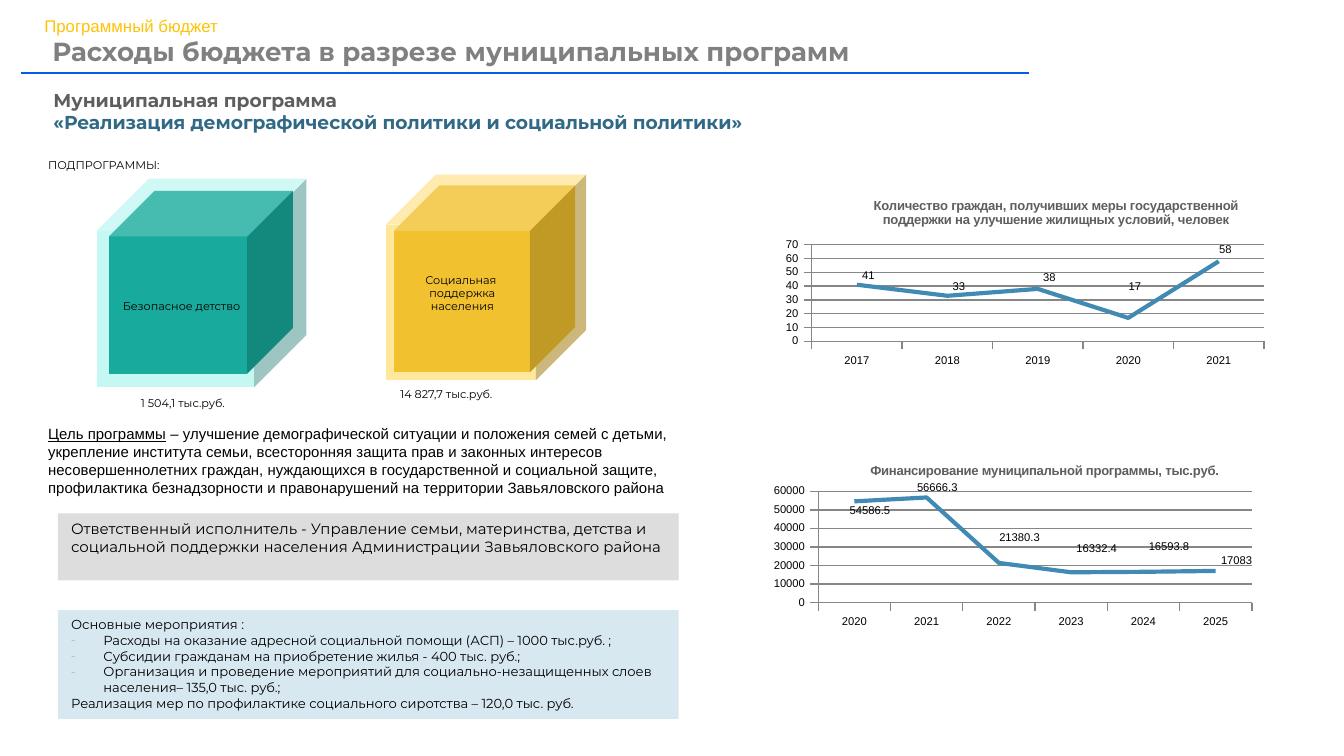
from lxml import etree
from pptx import Presentation
from pptx.chart.data import CategoryChartData
from pptx.dml.color import RGBColor
from pptx.enum import chart as ch, shapes, text
from pptx.oxml import ns, parse_xml
from pptx.util import Inches, Pt

BLACK = RGBColor(0x00, 0x00, 0x00)
WHITE = RGBColor(0xFF, 0xFF, 0xFF)
GRAY = RGBColor(0x80, 0x80, 0x80)
DARK_GRAY = RGBColor(0x5E, 0x5E, 0x5E)
LIGHT_GRAY = RGBColor(0xDD, 0xDD, 0xDD)
YELLOW = RGBColor(0xFE, 0xC3, 0x06)
BLUE = RGBColor(0x00, 0x5E, 0xE4)
PALE_BLUE = RGBColor(0xD8, 0xE8, 0xF1)
STEEL = RGBColor(0x31, 0x68, 0x86)
LINE_BLUE = RGBColor(0x41, 0x8A, 0xB3)
GRID = RGBColor(0x86, 0x86, 0x86)
TEAL, PALE_TEAL = RGBColor(0x18, 0xAA, 0x9D), RGBColor(0xC5, 0xF8, 0xF3)
GOLD, PALE_GOLD = RGBColor(0xF2, 0xC1, 0x30), RGBColor(0xFF, 0xE7, 0x9B)
MONT, ARIAL = "Montserrat", "Arial"


def write(sp, paragraphs, size, font=MONT, color=BLACK, inset=(0.1, 0.05), wrap=True,
          align=text.PP_ALIGN.LEFT, anchor=text.MSO_ANCHOR.TOP):
    """Fill a shape; a paragraph is a list of (text, extra font settings) runs."""
    tf = sp.text_frame
    x, y = (Inches(v) for v in inset)
    frame = {"word_wrap": wrap, "auto_size": text.MSO_AUTO_SIZE.NONE,
             "vertical_anchor": anchor, "margin_left": x, "margin_right": x,
             "margin_top": y, "margin_bottom": y}
    for name, value in frame.items():
        setattr(tf, name, value)
    for i, runs in enumerate(paragraphs):
        p = tf.add_paragraph() if i else tf.paragraphs[0]
        p.alignment, p.space_before = align, Pt(0)
        for words, extra in runs:
            r = p.add_run()
            r.text = words
            style = {"size": Pt(size), "name": font, **extra}
            r.font.color.rgb = style.pop("color", color)
            for name, value in style.items():
                setattr(r.font, name, value)
    return tf


def add_filled(parent, kind, box, color):
    sp = parent.add_shape(kind, *(Inches(v) for v in box))
    sp.shadow.inherit = False
    sp.fill.solid()
    sp.fill.fore_color.rgb = color
    sp.line.fill.background()
    return sp


prs = Presentation()
prs.slide_width = Inches(10)
prs.slide_height = Inches(10) * 9 // 16
s = prs.slides.add_slide(prs.slide_layouts[1])
title, body = s.placeholders
for sp, box in ((title, (0.32, 0.21, 9, 0.37)), (body, (0.43, 4.54, 4.62, 0.81))):
    sp.left, sp.top, sp.width, sp.height = (Inches(v) for v in box)

# Headings
tf = write(title, [[("Расходы бюджета в разрезе муниципальных программ", {"bold": True})]],
           14, color=GRAY, inset=(0.07, 0.04), anchor=text.MSO_ANCHOR.MIDDLE)
tf.paragraphs[0].line_spacing = 0.9
rule = add_filled(s.shapes, shapes.MSO_SHAPE.RECTANGLE, (0.15, 0.53, 7.51, 0.03), BLUE)
rule.line.color.rgb, rule.line.width = WHITE, Pt(0.75)

# Main activities
activities = [
    "Основные мероприятия :",
    "Расходы на оказание адресной социальной помощи (АСП) – 1000 тыс.руб. ;",
    "Субсидии гражданам на приобретение жилья - 400 тыс. руб.;",
    "Организация и проведение мероприятий для социально-незащищенных слоев "
    "населения– 135,0 тыс. руб.;",
    "Реализация мер по профилактике социального сиротства – 120,0 тыс. руб.",
]
body.fill.solid()
body.fill.fore_color.rgb = PALE_BLUE
tf = write(body, [[(line, {})] for line in activities], 7)
for i, p in enumerate(tf.paragraphs):
    bulleted = 0 < i < len(activities) - 1
    indent = Inches(0.24) if bulleted else 0
    pPr = p._p.get_or_add_pPr()
    pPr.set("marL", str(indent))
    pPr.set("indent", str(-indent))
    if bulleted:
        clr = etree.SubElement(pPr, ns.qn("a:buClr"))
        etree.SubElement(clr, ns.qn("a:srgbClr"), val="BFBFBF")
        etree.SubElement(pPr, ns.qn("a:buChar"), char="-")
    else:
        etree.SubElement(pPr, ns.qn("a:buNone"))

# Responsible body
sp = add_filled(s.shapes, shapes.MSO_SHAPE.RECTANGLE, (0.43, 3.82, 4.62, 0.5), LIGHT_GRAY)
write(sp, [[("Ответственный исполнитель - Управление семьи, материнства, детства и социальной "
             "поддержки населения Администрации Завьяловского района", {})]], 8)

# Subprogramme cubes
cubes = [
    ((0.72, 1.33, 1.56, 1.55), PALE_TEAL, (0.81, 1.42, 1.37, 1.36), TEAL,
     (0.8, 2.19, 1.1, 0.2), ["Безопасное детство"]),
    ((2.87, 1.3, 1.49, 1.53), PALE_GOLD, (2.93, 1.38, 1.35, 1.39), GOLD,
     (2.9, 1.99, 1.08, 0.82), ["Социальная ", "поддержка населения"]),
]
for outer, pale, inner, strong, label_box, lines in cubes:
    group = s.shapes.add_group_shape().shapes
    add_filled(group, shapes.MSO_SHAPE.CUBE, outer, pale)
    add_filled(group, shapes.MSO_SHAPE.CUBE, inner, strong)
    label = group.add_textbox(*(Inches(v) for v in label_box))
    write(label, [[(line, {})] for line in lines], 6, inset=(0.07, 0.04),
          align=text.PP_ALIGN.CENTER)

# Free text
bold = {"bold": True}
texts = [
    ((0.26, 0.08, 1.96, 0.23), [[("Программный бюджет", {})]], 9,
     {"font": ARIAL, "color": YELLOW, "inset": (0.07, 0.04)}),
    ((0.3, 0.61, 9.56, 0.44),
     [[("Муниципальная программа", {**bold, "color": DARK_GRAY})],
      [("«Реализация демографической политики и социальной политики»",
        {**bold, "color": STEEL})]], 10, {}),
    ((0.26, 3.11, 5.11, 0.64),
     [[("Цель программы", {"underline": True}),
       (" – улучшение демографической ситуации и положения семей с детьми, укрепление "
        "института семьи, всесторонняя защита прав и законных интересов несовершеннолетних "
        "граждан, нуждающихся в государственной и социальной защите, профилактика "
        "безнадзорности и правонарушений на территории Завьяловского района", {})]],
     8, {"font": ARIAL}),
    ((0.95, 2.9, 0.83, 0.2), [[("1 504,1 тыс.руб.", {})]], 6, {"wrap": False}),
    ((2.88, 2.83, 1.11, 0.2), [[("14 827,7 тыс.руб.", {})]], 6, {}),
    ((0.26, 1.13, 1.04, 0.2), [[("ПОДПРОГРАММЫ:", {})]], 6, {"wrap": False}),
]
for box, paragraphs, size, options in texts:
    write(s.shapes.add_textbox(*(Inches(v) for v in box)), paragraphs, size, **options)

# Line charts: layouts and label shifts are fractions of the chart's size
LAYOUT = ('<c:layout %s><c:manualLayout>%%s</c:manualLayout></c:layout>'
          % ns.nsdecls("c"))
charts = [
    ((5.78, 1.4, 3.7, 1.36),
     "Количество граждан, получивших меры государственной поддержки "
     "на улучшение жилищных условий, человек",
     2017, [41, 33, 38, 17, 58], (70, 10), (0.19, 0.04), (0.07, 0.31, 0.91, 0.53),
     [(0, -0.05), (0, -0.05), (0, -0.06), (-0.01, -0.17), (-0.01, -0.06)]),
    ((5.68, 3.27, 3.71, 1.43), "Финансирование муниципальной программы, тыс.руб.",
     2020, [54586.5, 56666.3, 21380.3, 16332.4, 16593.8, 17083], (60000, 10000),
     (0.21, 0.11), (0.11, 0.27, 0.87, 0.58),
     [(-0.02, 0.05), (-0.03, -0.05), (-0.01, -0.13), (0, -0.12), (0, -0.13), (0, -0.05)]),
]
for box, heading, year, values, (top, step), title_at, plot_at, shifts in charts:
    data = CategoryChartData()
    data.categories = [str(year + i) for i in range(len(values))]
    data.add_series("Series 1", values)
    chart = s.shapes.add_chart(ch.XL_CHART_TYPE.LINE, *(Inches(v) for v in box), data).chart
    chart.has_legend = False
    chart.font.size, chart.font.name, chart.font.color.rgb = Pt(6), ARIAL, BLACK

    r = chart.chart_title.text_frame.paragraphs[0].add_run()
    r.text = heading
    r.font.size, r.font.name, r.font.bold = Pt(7), ARIAL, True
    r.font.color.rgb = DARK_GRAY

    for axis in (chart.category_axis, chart.value_axis):
        axis.major_tick_mark = ch.XL_TICK_MARK.OUTSIDE
        axis.tick_labels.font.size = Pt(6)
        axis.format.line.color.rgb = GRID
    axis.minimum_scale, axis.maximum_scale, axis.major_unit = 0, top, step
    axis.major_gridlines.format.line.color.rgb = GRID

    plot = chart.plots[0]
    plot.vary_by_categories = False
    series = plot.series[0]
    series.smooth = False
    series.marker.style = ch.XL_MARKER_STYLE.NONE
    series.format.line.color.rgb, series.format.line.width = LINE_BLUE, Pt(2.25)
    for i, (dx, dy) in enumerate(shifts):
        label = series.points[i].data_label
        label.font.size = Pt(6)
        label.position = ch.XL_LABEL_POSITION.RIGHT
        label._dLbl.insert(1, parse_xml(LAYOUT % f'<c:x val="{dx}"/><c:y val="{dy}"/>'))
    series.data_labels.show_value = True
    for leader in series._element.iter(ns.qn("c:showLeaderLines")):
        leader.set("val", "0")

    for parent, index, sizes in ((chart.chart_title._element, 1, title_at),
                                 (chart._chartSpace.chart.plotArea, 0, plot_at)):
        for old in parent.findall(ns.qn("c:layout")):
            parent.remove(old)
        target = '<c:layoutTarget val="inner"/>' if len(sizes) == 4 else ""
        modes = '<c:xMode val="edge"/><c:yMode val="edge"/>'
        places = "".join(f'<c:{k} val="{v}"/>' for k, v in zip("xywh", sizes))
        parent.insert(index, parse_xml(LAYOUT % (target + modes + places)))

prs.save("out.pptx")
